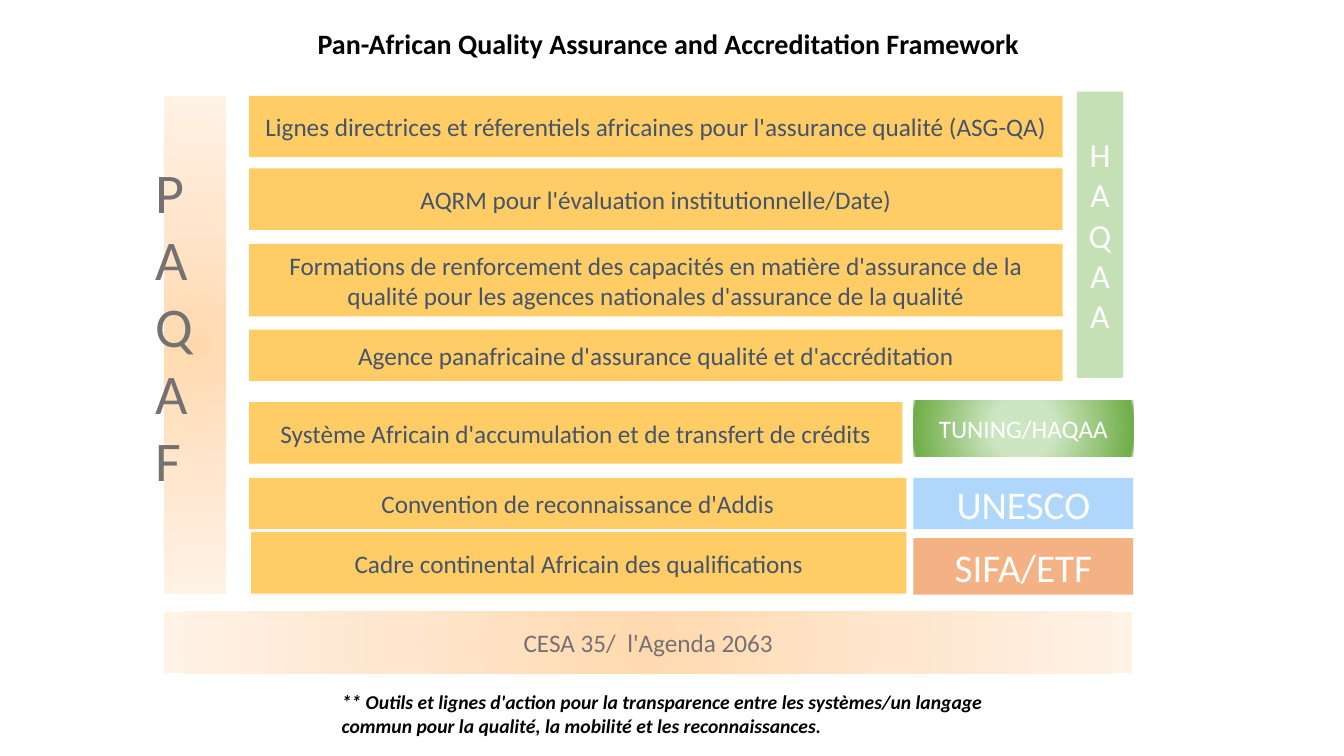
"""Build the PAQAF framework slide with its instruments and supporting programmes."""
from dataclasses import dataclass

from pptx import Presentation
from pptx.dml.color import RGBColor
from pptx.enum.shapes import MSO_SHAPE
from pptx.enum.text import MSO_ANCHOR, PP_ALIGN
from pptx.oxml import parse_xml
from pptx.oxml.ns import nsdecls
from pptx.slide import Slide
from pptx.text.text import TextFrame
from pptx.util import Inches, Pt

FONT = "Calibri"
BLACK = RGBColor(0x00, 0x00, 0x00)
WHITE = RGBColor(0xFF, 0xFF, 0xFF)
SLATE = RGBColor(0x44, 0x54, 0x6A)
GREY = RGBColor(0x76, 0x71, 0x71)
AMBER = RGBColor(0xFF, 0xCC, 0x66)
PALE_GREEN = RGBColor(0xC5, 0xE0, 0xB4)
MINT = RGBColor(0xCD, 0xE6, 0xC2)
GREEN = RGBColor(0x70, 0xAD, 0x47)
FROST = RGBColor(0xE6, 0xF2, 0xE1)
SKY = RGBColor(0xAF, 0xD7, 0xFB)
ORANGE = RGBColor(0xF4, 0xB1, 0x83)
PEACH = RGBColor(0xFF, 0xD9, 0xAE)
LIGHT_PEACH = RGBColor(0xFF, 0xE6, 0xCD)
CREAM = RGBColor(0xFF, 0xF2, 0xE6)

Gradient = tuple[tuple[int, RGBColor], ...]
PEACH_GLOW: Gradient = ((0, PEACH), (50, LIGHT_PEACH), (100, CREAM))
GREEN_GLOW: Gradient = ((27, MINT), (97, GREEN), (100, FROST))

BAR_LEFT = 2.47
WIDE = 8.07
PARTNER_LEFT = 9.06
PARTNER_WIDTH = 2.18


@dataclass
class Box:
    text: str
    left: float
    top: float
    width: float
    height: float
    fill: RGBColor | Gradient = AMBER
    color: RGBColor = SLATE
    size: int = 18


BOXES = [
    Box("", 1.63, 0.95, 0.61, 4.94, PEACH_GLOW),
    Box("Lignes directrices et réferentiels africaines pour l'assurance qualité (ASG-QA)",
        BAR_LEFT, 0.95, WIDE, 0.61),
    Box("AQRM pour l'évaluation institutionnelle/Date)", BAR_LEFT, 1.67, WIDE, 0.61),
    Box("Formations de renforcement des capacités en matière d'assurance de la "
        "qualité pour les agences nationales d'assurance de la qualité",
        BAR_LEFT, 2.42, WIDE, 0.72),
    Box("Agence panafricaine d'assurance qualité et d'accréditation",
        BAR_LEFT, 3.27, WIDE, 0.51),
    Box("Système Africain d'accumulation et de transfert de crédits",
        BAR_LEFT, 3.99, 6.48, 0.61),
    Box("Convention de reconnaissance d'Addis", BAR_LEFT, 4.74, 6.52, 0.51),
    Box("Cadre continental Africain des qualifications", 2.49, 5.28, 6.5, 0.61),
    Box("HAQAA", 10.68, 0.91, 0.46, 2.84, PALE_GREEN, WHITE, 24),
    Box("TUNING/HAQAA", PARTNER_LEFT, 3.97, PARTNER_WIDTH, 0.56, GREEN_GLOW, WHITE),
    Box("UNESCO", PARTNER_LEFT, 4.74, PARTNER_WIDTH, 0.51, SKY, WHITE, 28),
    Box("SIFA/ETF", PARTNER_LEFT, 5.34, PARTNER_WIDTH, 0.56, ORANGE, WHITE, 28),
    Box("CESA 35/  l'Agenda 2063", 1.63, 6.07, 9.6, 0.61, PEACH_GLOW, GREY),
]


def write(tf: TextFrame, text: str, size: int, color: RGBColor,
          align: PP_ALIGN = PP_ALIGN.LEFT, bold: bool = False, italic: bool = False) -> None:
    p = tf.paragraphs[0]
    p.alignment = align
    r = p.add_run()
    r.text = text
    r.font.name = FONT
    r.font.size = Pt(size)
    r.font.bold = bold
    r.font.italic = italic
    r.font.color.rgb = color


def radial_fill(stops: Gradient):
    marks = "".join(f'<a:gs pos="{pos * 1000}"><a:srgbClr val="{color}"/></a:gs>'
                    for pos, color in stops)
    return parse_xml(
        f'<a:gradFill {nsdecls("a")} rotWithShape="1"><a:gsLst>{marks}</a:gsLst>'
        '<a:path path="circle"><a:fillToRect l="50000" t="50000" r="50000" b="50000"/>'
        '</a:path></a:gradFill>')


def add_box(slide: Slide, box: Box) -> None:
    s = slide.shapes.add_shape(MSO_SHAPE.RECTANGLE, Inches(box.left), Inches(box.top),
                               Inches(box.width), Inches(box.height))
    s.shadow.inherit = False
    s.line.fill.background()
    if isinstance(box.fill, RGBColor):
        s.fill.solid()
        s.fill.fore_color.rgb = box.fill
    else:
        s.fill.background()
        sp_pr = s.element.spPr
        sp_pr.replace(sp_pr.eg_fillProperties, radial_fill(box.fill)) if hasattr(
            sp_pr, "eg_fillProperties") else None
    if box.text:
        tf = s.text_frame
        tf.word_wrap = True
        tf.vertical_anchor = MSO_ANCHOR.MIDDLE
        write(tf, box.text, box.size, box.color, PP_ALIGN.CENTER)


def add_text(slide: Slide, left: float, top: float, width: float, height: float) -> TextFrame:
    s = slide.shapes.add_textbox(Inches(left), Inches(top), Inches(width), Inches(height))
    s.text_frame.word_wrap = True
    return s.text_frame


def add_title(slide: Slide, text: str) -> None:
    s = slide.shapes.title
    s.left, s.top, s.width, s.height = Inches(3.05), Inches(0.21), Inches(7.22), Inches(0.44)
    tf = s.text_frame
    tf.word_wrap = False
    tf.vertical_anchor = MSO_ANCHOR.TOP
    write(tf, text, 20, BLACK, bold=True)


def main() -> None:
    prs = Presentation()
    prs.slide_width, prs.slide_height = Inches(13.33), Inches(7.5)
    slide = prs.slides.add_slide(prs.slide_layouts[5])
    add_title(slide, "Pan-African Quality Assurance and Accreditation Framework")
    for box in BOXES:
        add_box(slide, box)
    tf = add_text(slide, 1.44, 1.51, 1, 4.37)
    tf._txBody.bodyPr.set("vert", "wordArtVert")
    write(tf, "PAQAF", 40, GREY)
    tf = add_text(slide, 3.29, 6.8, 7.25, 0.57)
    write(tf, "** Outils et lignes d'action pour la transparence entre les systèmes/un langage "
              "commun pour la qualité, la mobilité et les reconnaissances.",
          14, BLACK, bold=True, italic=True)
    prs.save("out.pptx")


if __name__ == "__main__":
    main()
